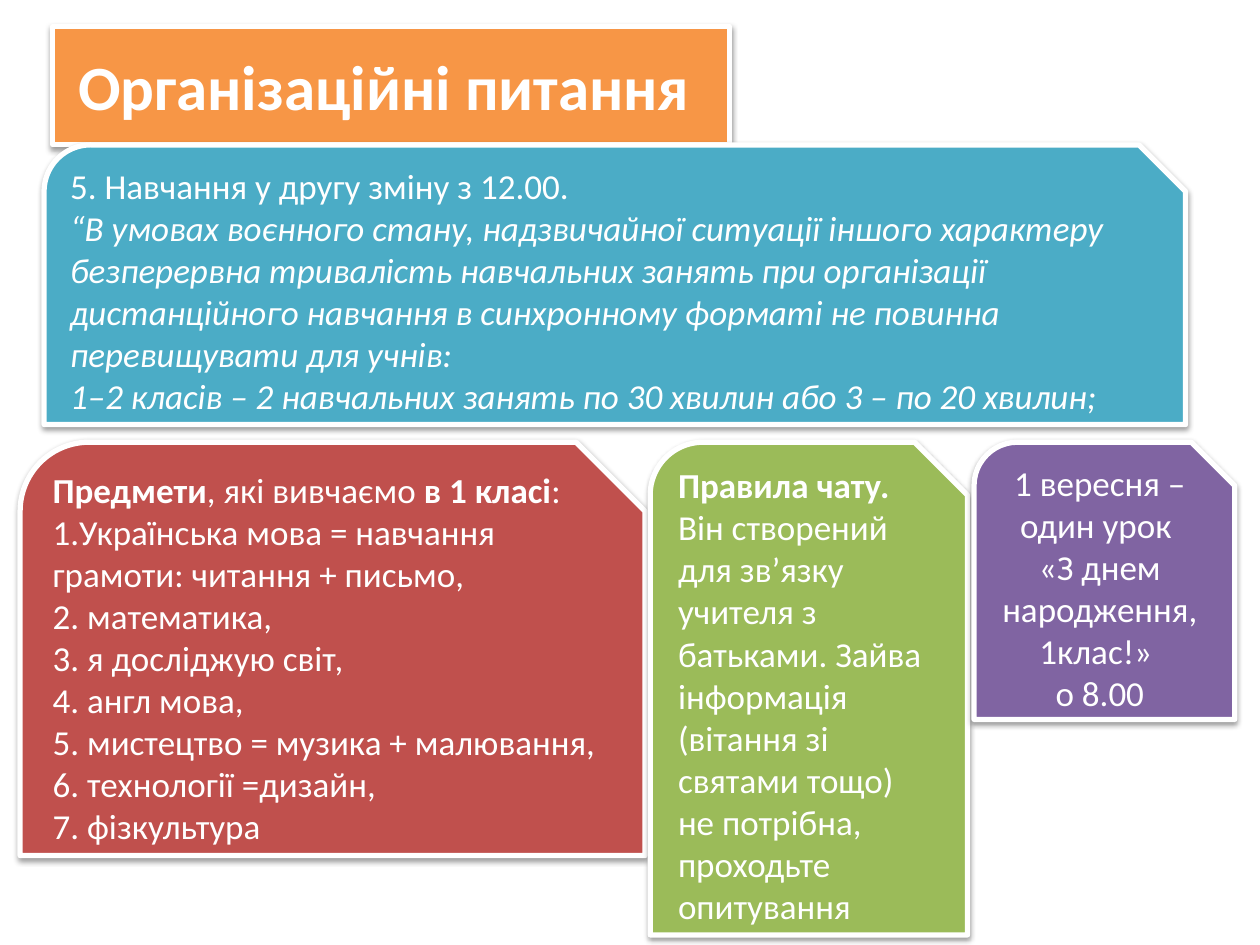
from dataclasses import dataclass

from lxml import etree
from pptx import Presentation
from pptx.dml.color import RGBColor
from pptx.enum import shapes, text
from pptx.oxml import ns
from pptx.util import Pt

WHITE = "FFFFFF"
CARD_ROW_TOP = 252.7
Run = tuple[str, dict]
PLAIN, BOLD, ITALIC = {}, {"bold": True}, {"italic": True}


@dataclass
class Card:
    left: float
    top: float
    width: float
    height: float
    color: str
    paragraphs: list[list[Run]]
    align: text.PP_ALIGN = text.PP_ALIGN.LEFT


def plain(*lines: str) -> list[list[Run]]:
    return [[(line, PLAIN)] for line in lines]


CARDS = [
    Card(25.2, 82.8, 652.3, 159.8, "4BACC6", [
        [("5. Навчання у другу зміну з 12.00.", PLAIN)],
        [("“В умовах воєнного стану, надзвичайної ситуації іншого характеру "
          "безперервна тривалість навчальних занять при організації "
          "дистанційного навчання в синхронному форматі не повинна "
          "перевищувати для учнів:", ITALIC)],
        [("1–2 класів – 2 навчальних занять по 30 хвилин або 3 – по 20 хвилин;", ITALIC)],
    ]),
    Card(11.5, CARD_ROW_TOP, 357.1, 236.2, "C0504D", [
        [("Предмети", BOLD), (", які вивчаємо ", PLAIN), ("в 1 класі", BOLD), (":", PLAIN)],
        *plain(
            "1.Українська мова = навчання грамоти: читання + письмо,",
            "2. математика,",
            "3. я досліджую світ,",
            "4. англ мова,",
            "5. мистецтво = музика + малювання,",
            "6. технології =дизайн,",
            "7. фізкультура",
        ),
    ]),
    Card(371.5, CARD_ROW_TOP, 181.4, 281.5, "9BBB59", [
        [("Правила чату. ", BOLD),
         ("Він створений для зв’язку учителя з батьками. Зайва інформація "
          "(вітання зі святами тощо) не потрібна, проходьте опитування", PLAIN)],
    ]),
    Card(556.6, CARD_ROW_TOP, 149, 158.4, "8064A2",
         plain("1 вересня – один урок ", "«З днем народження, 1клас!» ", "о 8.00"),
         text.PP_ALIGN.CENTER),
]


def rgb(value: str) -> RGBColor:
    return RGBColor.from_string(value)


def add_shadow(box) -> None:
    effects = etree.SubElement(box._element.spPr, ns.qn("a:effectLst"))
    shadow = etree.SubElement(
        effects, ns.qn("a:outerShdw"), blurRad=str(Pt(3.1)), dist=str(Pt(1.6)),
        dir="5400000", rotWithShape="0")
    color = etree.SubElement(shadow, ns.qn("a:srgbClr"), val="000000")
    etree.SubElement(color, ns.qn("a:alpha"), val="38000")


def style_box(box, color: str) -> None:
    box.fill.solid()
    box.fill.fore_color.rgb = rgb(color)
    box.line.color.rgb = rgb(WHITE)
    box.line.width = Pt(3)
    add_shadow(box)


def add_run(para, words: str, size: float, extra: dict) -> None:
    span = para.add_run()
    span.text = words
    for name, value in {"name": "Calibri", "size": Pt(size), **extra}.items():
        setattr(span.font, name, value)
    span.font.color.rgb = rgb(WHITE)


def fill_title(title) -> None:
    place = {"left": 30.2, "top": 15.1, "width": 386.6, "height": 67.7}
    for name, value in place.items():
        setattr(title, name, Pt(value))
    style_box(title, "F79646")
    title.text_frame.vertical_anchor = text.MSO_ANCHOR.MIDDLE
    para = title.text_frame.paragraphs[0]
    para.alignment = text.PP_ALIGN.CENTER
    add_run(para, "Організаційні питання ", 36, BOLD)


def draw_card(slide, card: Card) -> None:
    box = slide.shapes.add_shape(
        shapes.MSO_SHAPE.SNIP_ROUND_RECTANGLE,
        Pt(card.left), Pt(card.top), Pt(card.width), Pt(card.height))
    style_box(box, card.color)
    frame = box.text_frame
    settings = {"word_wrap": True, "vertical_anchor": text.MSO_ANCHOR.TOP,
                "auto_size": text.MSO_AUTO_SIZE.SHAPE_TO_FIT_TEXT}
    for name, value in settings.items():
        setattr(frame, name, value)
    for index, runs in enumerate(card.paragraphs):
        para = frame.add_paragraph() if index else frame.paragraphs[0]
        para.alignment = card.align
        for words, extra in runs:
            add_run(para, words, 20, extra)


def main() -> None:
    deck = Presentation()
    deck.slide_width, deck.slide_height = Pt(720), Pt(540)
    slide = deck.slides.add_slide(deck.slide_layouts.get_by_name("Title Only"))
    fill_title(slide.shapes.title)
    for card in CARDS:
        draw_card(slide, card)
    deck.save("out.pptx")


if __name__ == "__main__":
    main()
